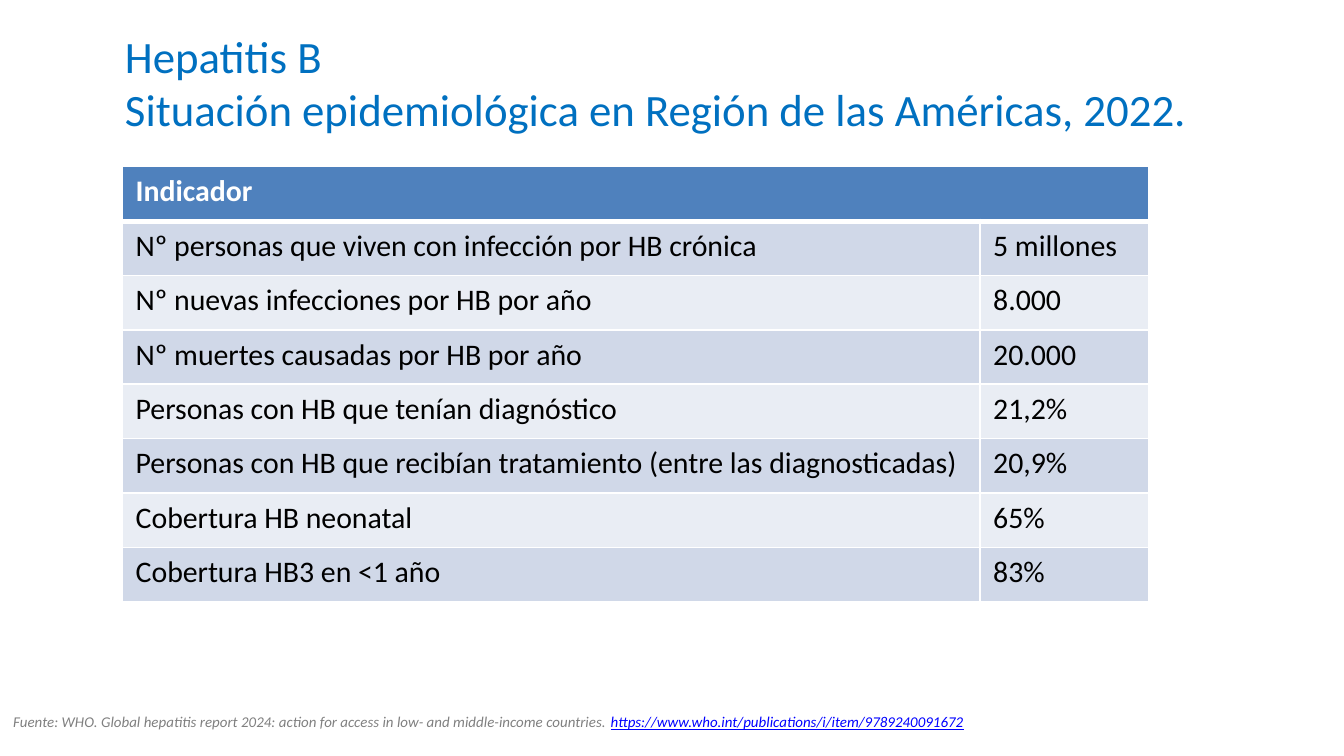
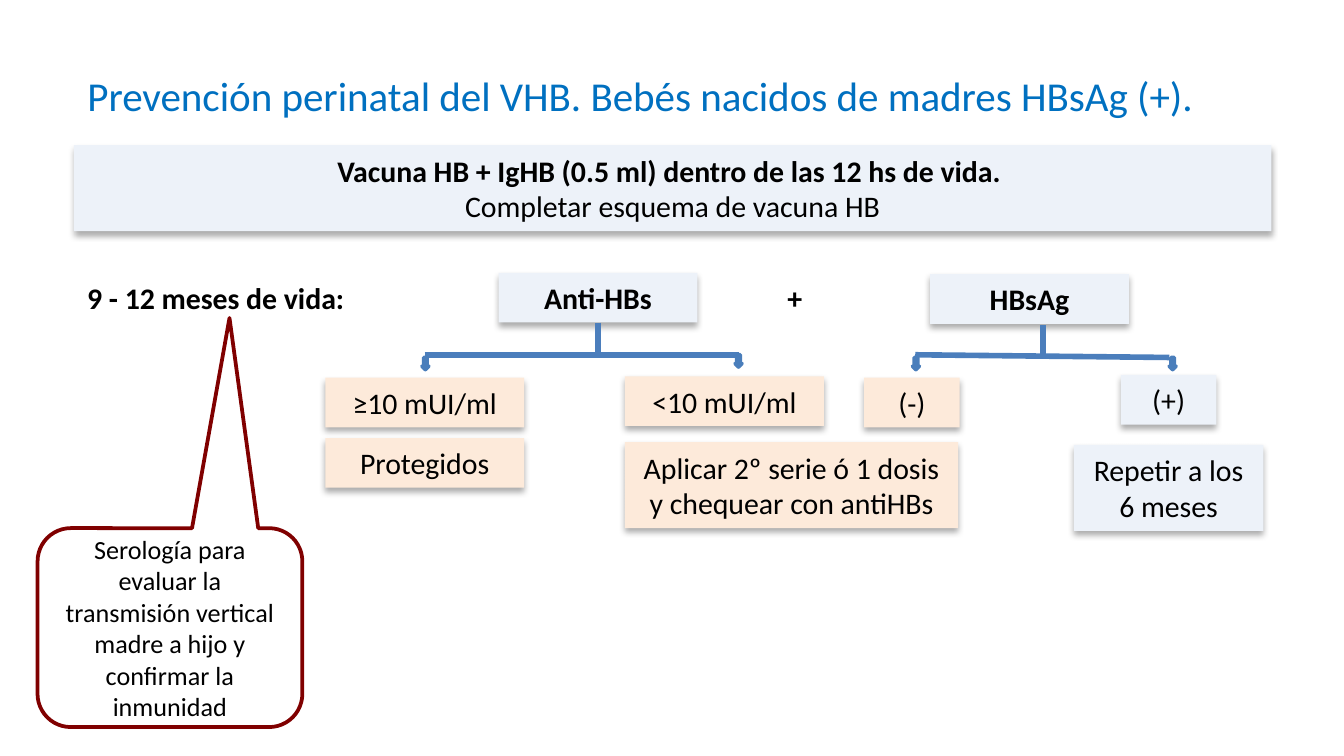
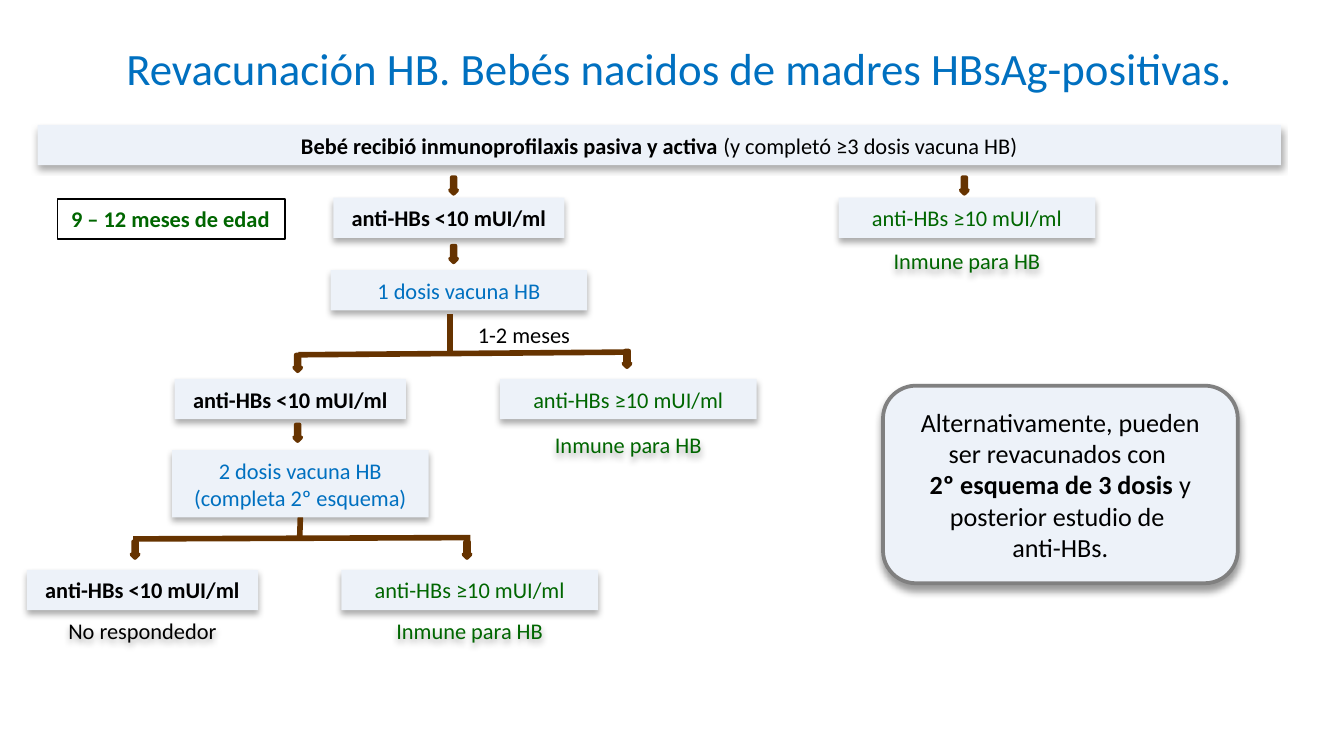
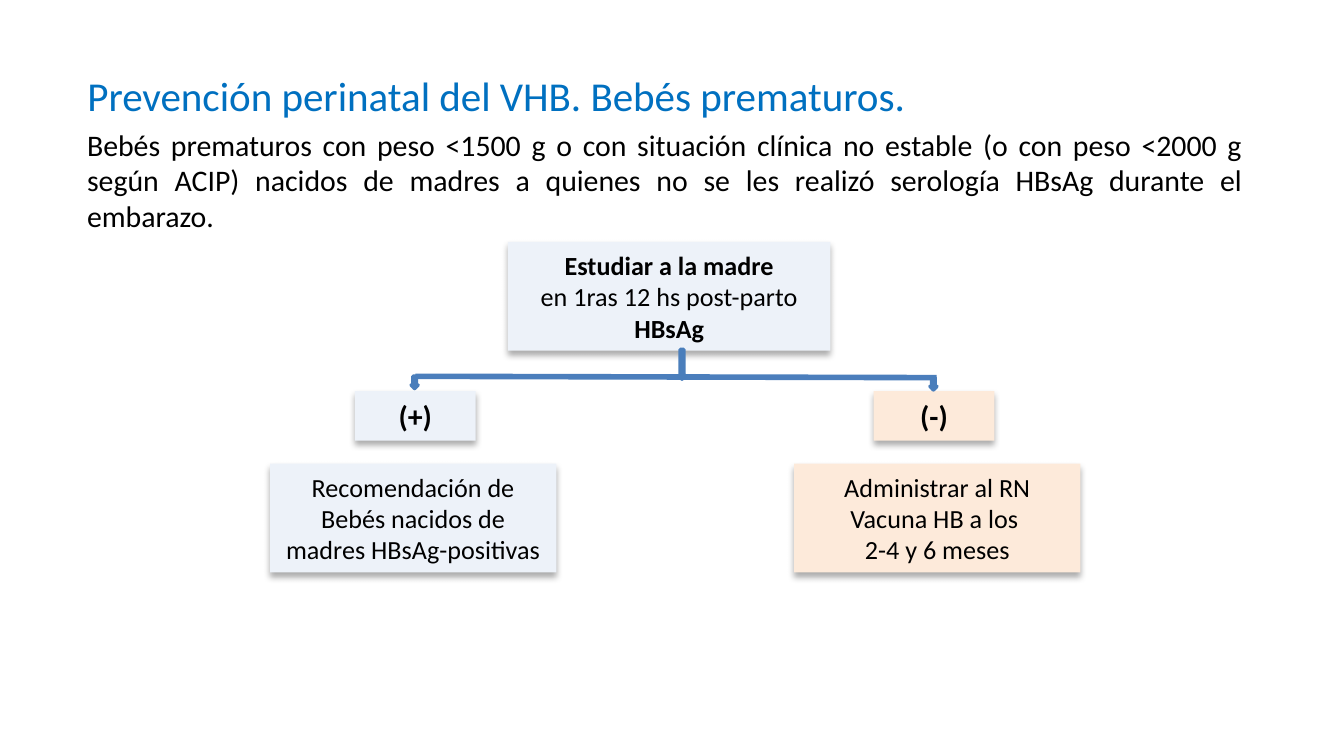
"""Build four slides on hepatitis B: regional figures and perinatal prevention flows."""
from dataclasses import dataclass

from lxml import etree
from pptx import Presentation
from pptx import util as u
from pptx.dml.color import RGBColor
from pptx.enum import shapes, text as t
from pptx.oxml import ns


@dataclass(frozen=True)
class Theme:
    font: str = "Calibri"
    title: str = "0070C0"
    black: str = "000000"
    white: str = "FFFFFF"
    gray: str = "808080"
    link: str = "0000FF"
    green: str = "006600"
    maroon: str = "800000"
    brown: str = "663300"
    pale: str = "EDF2F9"
    peach: str = "FDEADA"
    header: str = "4F81BD"
    band: str = "D0D8E8"
    light_band: str = "E9EDF4"
    flow: str = "4B7EBC"
    arrow: str = "4A7EBB"
    heading: int = 24
    subheading: int = 22
    large: int = 16
    medium: int = 14
    small: int = 12
    source: int = 8


theme = Theme()
deck = Presentation()
deck.slide_width = u.Inches(10)
deck.slide_height = u.Inches(10 * 9 / 16)
grid = deck.slide_width // 100
LEFT, CENTER = t.PP_ALIGN.LEFT, t.PP_ALIGN.CENTER
RIGHT, JUSTIFY = t.PP_ALIGN.RIGHT, t.PP_ALIGN.JUSTIFY
RECTANGLE = shapes.MSO_SHAPE.RECTANGLE


def write(frame, text, size=theme.large, color=theme.black, align=LEFT,
          bold=False, italic=False, underline=False, tab=None):
    for number, line in enumerate(text.split("\n")):
        para = frame.paragraphs[0] if number == 0 else frame.add_paragraph()
        para.alignment = align
        if tab:
            stops = etree.SubElement(para._p.get_or_add_pPr(), ns.qn("a:tabLst"))
            etree.SubElement(stops, ns.qn("a:tab"), pos=str(int(tab * grid)), algn="l")
        for row, piece in enumerate(line.split("\v")):
            if row:
                para.add_line_break()
            for turn, words in enumerate(piece.split("**")):
                if not words:
                    continue
                span = para.add_run()
                span.text = words
                font = span.font
                font.name, font.size = theme.font, u.Pt(size)
                font.bold = bold or turn % 2 == 1
                font.italic, font.underline = italic, underline
                font.color.rgb = RGBColor.from_string(color)


def add_box(page, place, text="", fill=None, line=None, width=2, shape=RECTANGLE,
            shadow=None, adjust=(), wrap=True, **style):
    area = [int(value * grid) for value in place]
    box = page.shapes.add_shape(shape, *area) if shape else page.shapes.add_textbox(*area)
    for index, value in enumerate(adjust):
        box.adjustments[index] = value
    if fill:
        box.fill.solid()
        box.fill.fore_color.rgb = RGBColor.from_string(fill)
    else:
        box.fill.background()
    if line:
        box.line.color.rgb = RGBColor.from_string(line)
        box.line.width = u.Pt(width)
    else:
        box.line.fill.background()
    box.shadow.inherit = False
    if shadow:
        alpha, blur, distance = shadow
        effects = box.element.spPr.find(ns.qn("a:effectLst"))
        outer = etree.SubElement(
            effects, ns.qn("a:outerShdw"), blurRad=str(u.Pt(blur)),
            dist=str(u.Pt(distance)), dir="5400000", rotWithShape="0")
        tint = etree.SubElement(outer, ns.qn("a:srgbClr"), val=theme.black)
        etree.SubElement(tint, ns.qn("a:alpha"), val=str(alpha * 1000))
    if text:
        frame = box.text_frame
        frame.word_wrap = wrap
        frame.vertical_anchor = t.MSO_ANCHOR.MIDDLE if shape else t.MSO_ANCHOR.TOP
        write(frame, text, **style)
    return box


titles = [
    ("Hepatitis B\vSituación epidemiológica en Región de las Américas, 2022.",
     (8.3, 1.4, 81.1, 9.4), theme.heading, LEFT),
    ("Prevención perinatal del VHB. Bebés nacidos de madres HBsAg (+).",
     (5.5, 4.7, 89.1, 4.7), theme.subheading, JUSTIFY),
    ("Revacunación HB. Bebés nacidos de madres HBsAg-positivas.",
     (8.4, 1.5, 86.3, 7), theme.heading, LEFT),
    ("Prevención perinatal del VHB. Bebés prematuros.",
     (5.5, 4.7, 89.1, 4.7), theme.subheading, JUSTIFY),
]
pages = []
for words, place, size, align in titles:
    page = deck.slides.add_slide(deck.slide_layouts[5])
    title = page.shapes.title
    title.left, title.top, title.width, title.height = [int(v * grid) for v in place]
    title.text_frame.word_wrap = True
    title.text_frame.auto_size = t.MSO_AUTO_SIZE.NONE
    title.text_frame.vertical_anchor = t.MSO_ANCHOR.MIDDLE
    write(title.text_frame, words, size=size, color=theme.title, align=align)
    pages.append(page)
figures_page, perinatal_page, booster_page, preterm_page = pages

indicators = [
    ("Indicador", ""),
    ("Nº personas que viven con infección por HB crónica", "5 millones"),
    ("Nº nuevas infecciones por HB por año", "8.000"),
    ("Nº muertes causadas por HB por año", "20.000"),
    ("Personas con HB que tenían diagnóstico", "21,2%"),
    ("Personas con HB que recibían tratamiento (entre las diagnosticadas)", "20,9%"),
    ("Cobertura HB neonatal", "65%"),
    ("Cobertura HB3 en <1 año", "83%"),
]
table = figures_page.shapes.add_table(
    len(indicators), 2, *[int(v * grid) for v in (9.1, 12.4, 76.4, 32.4)]).table
for column, width in zip(table.columns, (63.8, 12.6)):
    column.width = int(width * grid)
table.cell(0, 0).merge(table.cell(0, 1))
for row, values in enumerate(indicators):
    fill = theme.header if row == 0 else (theme.light_band, theme.band)[row % 2]
    for column, value in enumerate(values):
        cell = table.cell(row, column)
        cell.fill.solid()
        cell.fill.fore_color.rgb = RGBColor.from_string(fill)
        write(cell.text_frame, value, bold=row == 0,
              color=theme.black if row else theme.white)
        borders = {"lnL": 1, "lnR": 1, "lnT": 3 if row == 1 else 1, "lnB": 1 if row else 3}
        for order, (side, points) in enumerate(borders.items()):
            edge = etree.Element(ns.qn("a:" + side), w=str(u.Pt(points)))
            paint = etree.SubElement(edge, ns.qn("a:solidFill"))
            etree.SubElement(paint, ns.qn("a:srgbClr"), val=theme.white)
            cell._tc.get_or_add_tcPr().insert(order, edge)

source = add_box(
    figures_page, (0, 52.55, 74.8, 3.7),
    "Fuente: WHO. Global hepatitis report 2024: action for access in low- and "
    "middle-income countries. ",
    shape=None, size=theme.source, color=theme.gray, italic=True)
write(source.text_frame, "https://www.who.int/publications/i/item/9789240091672",
      size=theme.source, color=theme.link, italic=True, underline=True)

soft = (32, 3.5, 2.2)
pale = dict(fill=theme.pale, shadow=soft, align=CENTER)
peach = dict(pale, fill=theme.peach)
pale_bold = dict(pale, bold=True)
pale_medium = dict(pale, size=theme.medium)
pale_small = dict(pale, size=theme.small)
label = dict(shape=None, size=theme.small, align=CENTER, shadow=soft)

perinatal_boxes = [
    ((5.5, 20.3, 85.2, 3.7), "9 - 12 meses de vida:\t+", dict(shape=None, bold=True, tab=52.1)),
    ((37.1, 20.3, 14.8, 3.7), "Anti-HBs", pale_bold),
    ((69.2, 20.4, 14.8, 3.7), "HBsAg", pale_bold),
    ((5.5, 10.8, 89.1, 6.4),
     "**Vacuna HB + IgHB (0.5 ml) dentro de las 12 hs de vida. **\n"
     "Completar esquema de vacuna HB", pale),
    ((24.2, 32.6, 14.8, 3.7), "Protegidos", peach),
    ((24.2, 28.1, 14.8, 3.7), "≥10 mUI/ml", peach),
    ((46.5, 28, 14.8, 3.7), "<10 mUI/ml", peach),
    ((64.3, 28.1, 7.1, 3.7), "(-)", peach),
    ((83.4, 27.9, 7.1, 3.7), "(+)", pale),
    ((79.9, 33.1, 14.1, 6.4), "Repetir a los 6 meses", pale),
    ((46.5, 32.9, 24.8, 6.4), "Aplicar 2º serie ó 1 dosis y chequear con antiHBs", peach),
    ((2.8, 39.3, 19.7, 14.8),
     "Serología para evaluar la transmisión vertical madre a hijo y confirmar la inmunidad",
     dict(shape=shapes.MSO_SHAPE.ROUNDED_RECTANGULAR_CALLOUT, adjust=(0.225, -1.557, 0.167),
          fill=theme.white, line=theme.maroon, size=theme.medium, align=CENTER)),
]

booster_boxes = [
    ((4.3, 14.8, 16.9, 3), "9 – 12 meses de edad",
     dict(line=theme.black, width=0.75, wrap=False, size=theme.small,
          color=theme.green, bold=True)),
    ((2.8, 9.3, 92.5, 3),
     "**Bebé recibió inmunoprofilaxis pasiva y activa **(y completó ≥3 dosis vacuna HB)",
     pale_small),
    ((24.6, 20.1, 19.1, 3), "1 dosis vacuna HB", dict(pale_small, color=theme.title)),
    ((24.6, 23.4, 18.8, 3), "1-2 meses", dict(label, align=RIGHT, shadow=None)),
    ((12.8, 33.5, 19.1, 5), "2 dosis vacuna HB\n(completa 2º esquema)",
     dict(pale_small, color=theme.title)),
    ((2, 45.4, 17.2, 3), "No respondedor", label),
    ((65.7, 28.7, 26.4, 14.7),
     "Alternativamente, pueden ser revacunados con \n"
     "**2º esquema de 3 dosis **y posterior estudio de \nanti-HBs.",
     dict(pale_medium, shape=shapes.MSO_SHAPE.ROUNDED_RECTANGLE, line=theme.gray,
          shadow=(40, 4, 3))),
]
for top, low, high, immune in [(14.7, 24.8, 62.4, 17.9), (28.2, 13, 37.2, 31.6),
                               (42.4, 2, 25.4, 45.4)]:
    booster_boxes += [
        ((low, top, 17.2, 3), "anti-HBs <10 mUI/ml", dict(pale_small, bold=True)),
        ((high, top, 19.1, 3), "anti-HBs ≥10 mUI/ml", dict(pale_small, color=theme.green)),
        ((high, immune, 19.1, 3), "Inmune para HB", dict(label, color=theme.green)),
    ]

preterm_boxes = [
    ((5.5, 8.9, 88, 9.1),
     "Bebés prematuros con peso <1500 g o con situación clínica no estable (o con peso "
     "<2000 g según ACIP) nacidos de madres a quienes no se les realizó serología HBsAg "
     "durante el embarazo.", dict(shape=None, align=JUSTIFY)),
    ((37.8, 18, 24, 8.1), "**Estudiar a la madre**\nen 1ras 12 hs post-parto\n**HBsAg**",
     pale_medium),
    ((26.4, 29.1, 9, 3.7), "(+)", pale_bold),
    ((65, 29.1, 9, 3.7), "(-)", dict(peach, bold=True)),
    ((59.1, 34.5, 21.3, 8.1), "Administrar al RN\nVacuna HB a los \n2-4 y 6 meses",
     dict(peach, size=theme.medium)),
    ((20.1, 34.5, 21.3, 8.1), "Recomendación de Bebés nacidos de madres HBsAg-positivas",
     pale_medium),
]

blue = dict(fill=theme.header, line=theme.arrow, width=2)
brown = dict(fill=theme.brown, line=theme.brown, width=2.25)
flows = [
    (perinatal_page, perinatal_boxes, theme.flow, blue,
     [(44.5, 24, 44.5, 26.4), (31.6, 26.4, 55, 26.4),
      (68.1, 26.4, 87, 26.6), (77.6, 24.2, 77.6, 26.7)],
     [(54.7, 26.4, 0.9), (31.4, 26.6, 0.9), (67.9, 26.6, 0.9), (87, 26.6, 0.9)]),
    (booster_page, booster_boxes, theme.brown, brown,
     [(22.2, 26.4, 46.9, 26.2), (33.5, 23.4, 33.5, 26.2),
      (9.9, 40.1, 35, 40), (22.3, 38.6, 22.3, 40)],
     [(33.5, 13.2, 1.2), (71.5, 13.2, 1.2), (33.5, 18.3, 1.2), (21.9, 26.4, 1.2),
      (46.4, 26.1, 1.2), (21.9, 31.6, 1.2), (9.8, 40.3, 1.2), (34.5, 40.3, 1.2)]),
    (preterm_page, preterm_boxes, theme.flow, blue,
     [(30.9, 28, 69.7, 28.1)],
     [(69.2, 28.1, 0.9), (30.6, 28, 0.9), (50.5, 26, 2.2)]),
]
for page, boxes, ink, arrow_style, lines, arrows in flows:
    drawn = [add_box(page, place, words, **style) for place, words, style in boxes]
    for ends in lines:
        x1, y1, x2, y2 = [int(value * grid) for value in ends]
        link = page.shapes.add_connector(shapes.MSO_CONNECTOR.STRAIGHT, x1, y1, x2, y2)
        link.line.color.rgb = RGBColor.from_string(ink)
        link.line.width = u.Pt(3)
        etree.SubElement(link.element.spPr, ns.qn("a:effectLst"))
        for box in drawn:
            gap_x = abs(box.left + box.width // 2 - x1)
            gap_y = abs(box.top + box.height - y1)
            if max(gap_x, gap_y) < 0.2 * grid:
                link.begin_connect(box, 2)
    for x, y, height in arrows:
        add_box(page, (x, y, 0.5, height), shape=shapes.MSO_SHAPE.DOWN_ARROW, **arrow_style)

deck.save("out.pptx")
